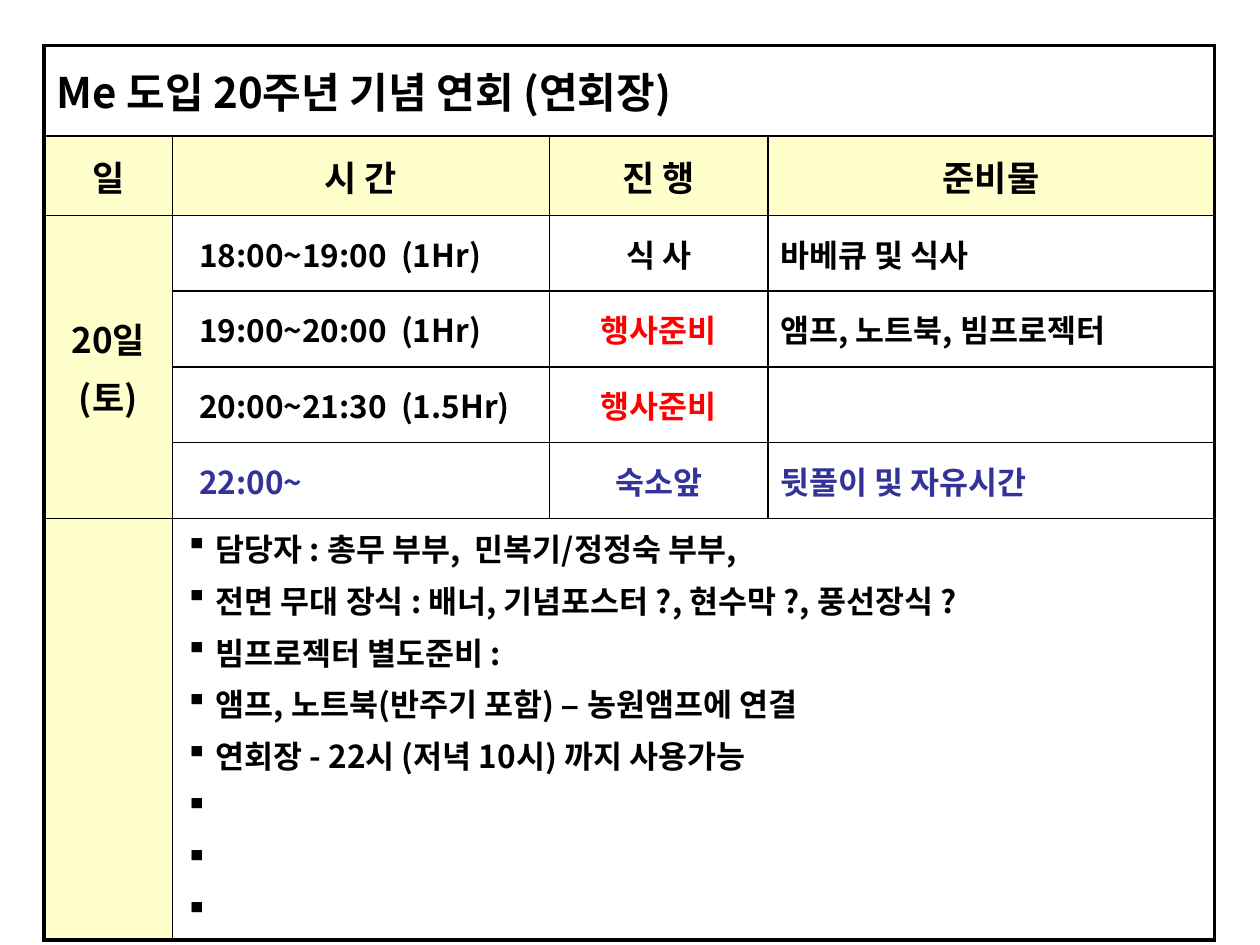
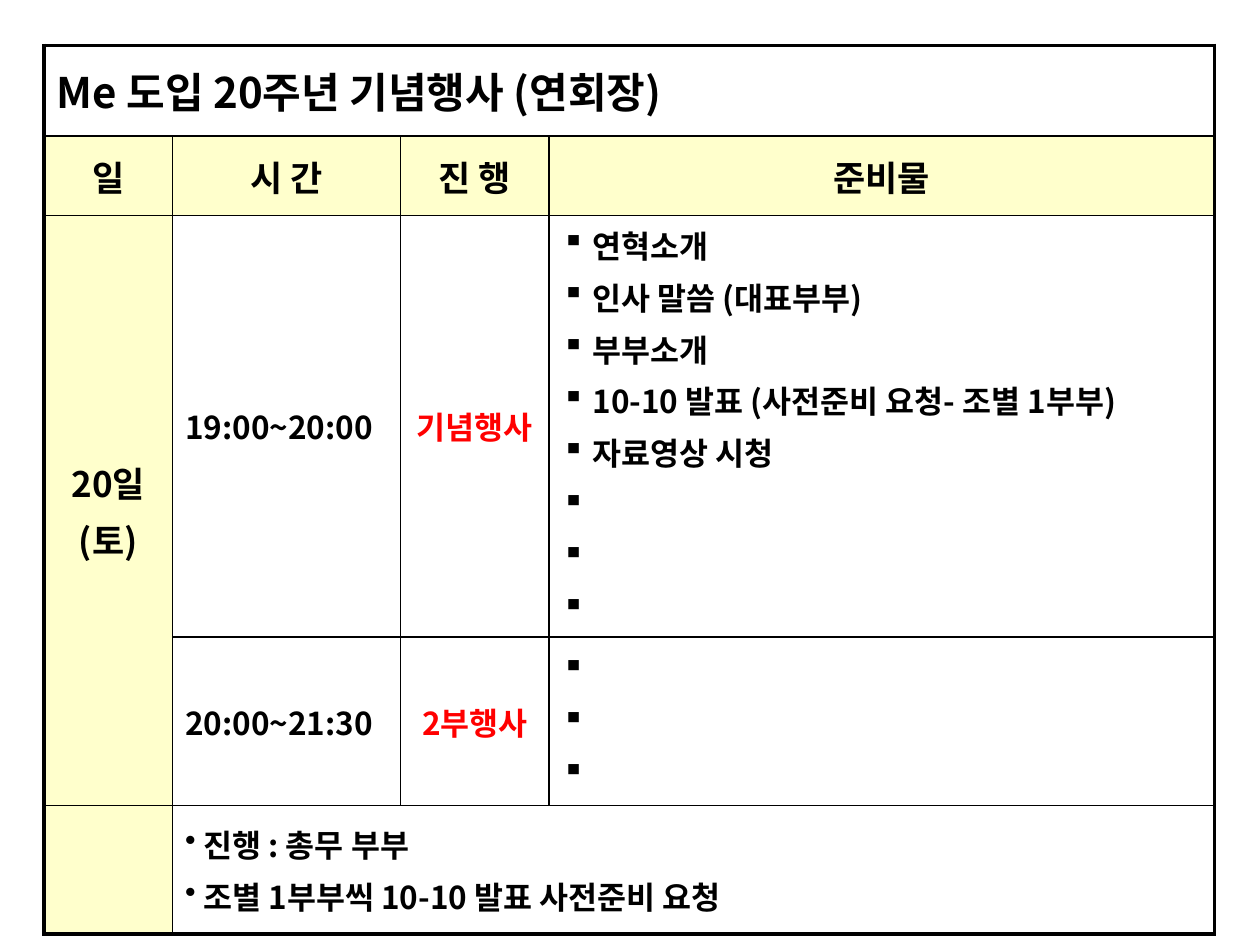
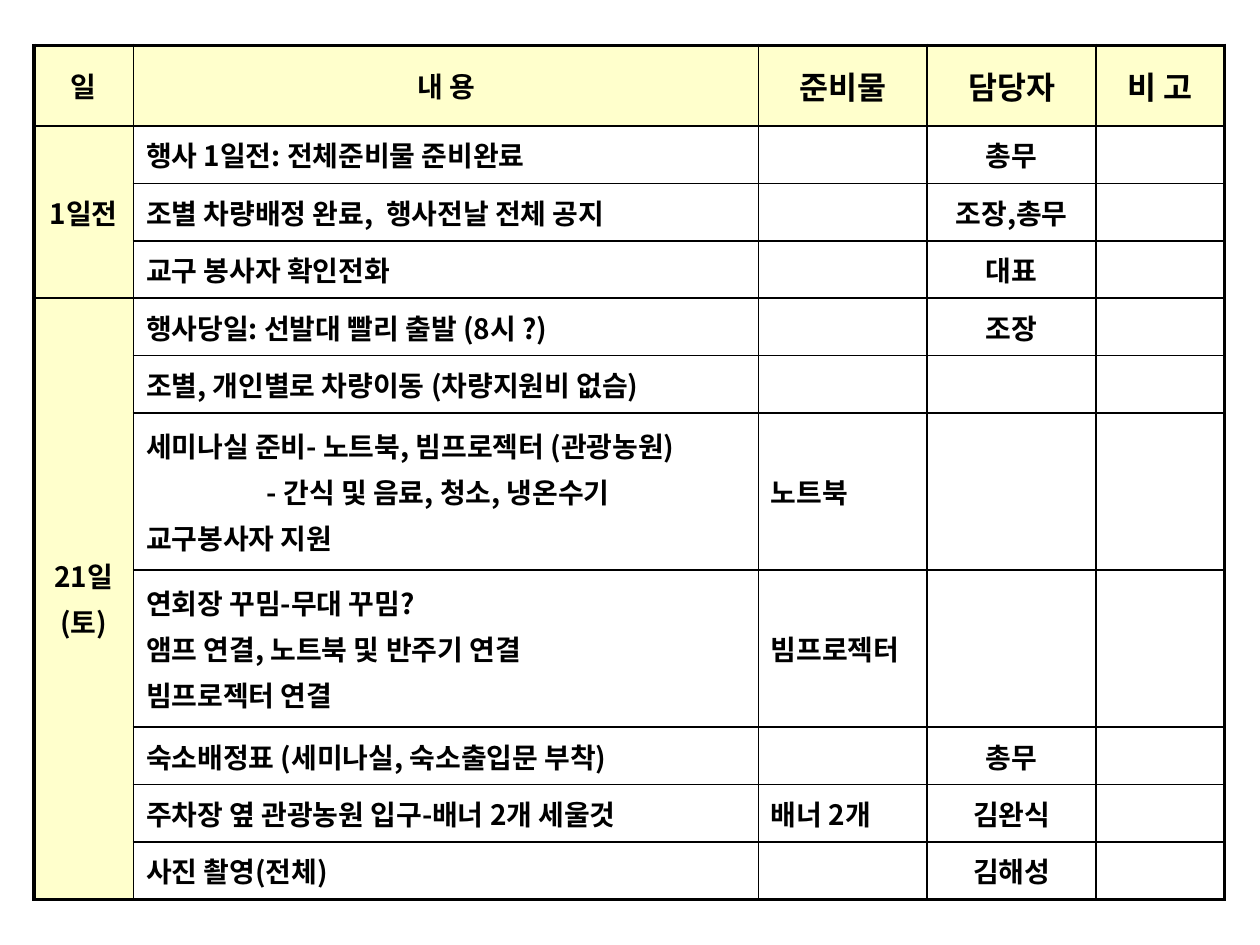
from pptx import Presentation
from pptx import util as u
from pptx.dml.color import RGBColor
from pptx.enum import text
from pptx.oxml import ns, xmlchemy

INK = RGBColor(0, 0, 0)
RED = RGBColor(0xFF, 0, 0)
BLUE = RGBColor(0x33, 0x33, 0x99)
CREAM = RGBColor(0xFF, 0xFF, 0xCC)
FACE = "Noto Sans CJK KR"
DASH = "– "
THICK, THIN = 2.25, 1

# Keys are (row, column); a merge gives its first and last cell.
PLANS = [
    {
        "left": 25.2,
        "cols": [73.4, 215.3, 125, 255],
        "rows": [51.8, 45.4] + [43.3] * 4 + [210],
        "head": 1,
        "mid": 2,
        "shift": 8,
        "size": 18,
        "sizes": {(0, 0): 24, (2, 0): 20, **{(1, c): 20 for c in range(4)}},
        "merge": [((0, 0), (0, 3)), ((2, 0), (5, 0)), ((6, 1), (6, 3))],
        "inks": {(3, 2): RED, (4, 2): RED, **{(5, c): BLUE for c in (1, 2, 3)}},
        "cells": [
            ["Me 도입 20주년 기념 연회 (연회장)"],
            ["일", "시 간", "진 행", "준비물"],
            ["20일\n(토)", "18:00~19:00  (1Hr)", "식 사", "바베큐 및 식사"],
            ["", "19:00~20:00  (1Hr)", "행사준비", "앰프, 노트북, 빔프로젝터"],
            ["", "20:00~21:30  (1.5Hr)", "행사준비"],
            ["", "22:00~", "숙소앞", "뒷풀이 및 자유시간"],
            ["", "▪ 담당자 : 총무 부부,  민복기/정정숙 부부,\n"
                 "▪ 전면 무대 장식 : 배너, 기념포스터 ?, 현수막 ?, 풍선장식 ?\n"
                 "▪ 빔프로젝터 별도준비 :\n"
                 "▪ 앰프, 노트북(반주기 포함) – 농원앰프에 연결\n"
                 "▪ 연회장 - 22시 (저녁 10시) 까지 사용가능\n"
                 "▪ \n▪ \n▪ "],
        ],
    },
    {
        "left": 25.2,
        "cols": [73.4, 130.3, 85, 380],
        "rows": [51.8, 45.4, 220.3, 96.5, 73.4],
        "head": 1,
        "mid": 2,
        "shift": 0,
        "size": 18,
        "sizes": {(0, 0): 24, (2, 0): 20, **{(1, c): 20 for c in range(4)}},
        "merge": [((0, 0), (0, 3)), ((2, 0), (3, 0)), ((4, 1), (4, 3))],
        "inks": {(2, 2): RED, (3, 2): RED},
        "cells": [
            ["Me 도입 20주년 기념행사 (연회장)"],
            ["일", "시 간", "진 행", "준비물"],
            ["20일\n(토)", "19:00~20:00", "기념행사",
             "▪ 연혁소개\n▪ 인사 말씀 (대표부부)\n▪ 부부소개\n"
             "▪ 10-10 발표 (사전준비 요청- 조별 1부부)\n▪ 자료영상 시청\n"
             "▪ \n▪ \n▪ "],
            ["", "20:00~21:30", "2부행사", "▪ \n▪ \n▪ "],
            ["", "• 진행 : 총무 부부\n• 조별 1부부씩 10-10 발표 사전준비 요청"],
        ],
    },
    {
        "left": 19.4,
        "cols": [56.9, 357.1, 96.5, 96.5, 73.4],
        "rows": [46.1] + [32.8] * 5 + [89.8] * 2 + [32.8] * 3,
        "head": 0,
        "mid": 3,
        "shift": 0,
        "size": 16,
        "sizes": {(0, c): 18 for c in (2, 3, 4)},
        "merge": [((1, 0), (3, 0)), ((4, 0), (10, 0))],
        "inks": {},
        "cells": [
            ["일", "내 용", "준비물", "담당자", "비 고"],
            ["1일전", "행사 1일전: 전체준비물 준비완료", "", "총무"],
            ["", "조별 차량배정 완료,  행사전날 전체 공지", "", "조장,총무"],
            ["", "교구 봉사자 확인전화", "", "대표"],
            ["21일\n(토)", "행사당일: 선발대 빨리 출발 (8시 ?)", "", "조장"],
            ["", "조별, 개인별로 차량이동 (차량지원비 없슴)"],
            ["", "세미나실 준비- 노트북, 빔프로젝터 (관광농원)\n"
                 "- 간식 및 음료, 청소, 냉온수기\n교구봉사자 지원", "노트북"],
            ["", "연회장 꾸밈-무대 꾸밈?\n앰프 연결, 노트북 및 반주기 연결\n"
                 "빔프로젝터 연결", "빔프로젝터"],
            ["", "숙소배정표 (세미나실, 숙소출입문 부착)", "", "총무"],
            ["", "주차장 옆 관광농원 입구-배너 2개 세울것", "배너 2개", "김완식"],
            ["", "사진 촬영(전체)", "", "김해성"],
        ],
    },
]


def add(parent, tag, **attrs):
    """Append a child element with the given attributes."""
    child = xmlchemy.OxmlElement(tag)
    for key, value in attrs.items():
        child.set(key, str(value))
    parent.append(child)
    return child


def write(cell, words, size, ink, align, shift):
    """Fill a cell line by line; a leading ▪ or • becomes a bullet."""
    for n, line in enumerate(words.split("\n")):
        para = cell.text_frame.paragraphs[0] if n == 0 else cell.text_frame.add_paragraph()
        para.alignment = align
        para.space_before = u.Pt(size * 0.2)
        props = para._p.get_or_add_pPr()
        indent = 69 if line.startswith("- ") else shift
        if indent:
            props.set("marL", str(u.Pt(indent)))
        if line[0] in "▪•":
            add(props, "a:buChar", char=line[0])
            line = line[1:]
        start, dash, rest = line.partition(DASH)
        for part, face in ((start, FACE), (dash, "Arial"), (rest, FACE)):
            if part:
                run = para.add_run()
                run.text = part
                style = {"name": face, "size": u.Pt(size), "bold": True}
                for key, value in style.items():
                    setattr(run.font, key, value)
                run.font.color.rgb = ink
                add(run._r.get_or_add_rPr(), "a:ea", typeface=face)
                # the East Asian face must follow the Latin one
                run._r.rPr.find(ns.qn("a:latin")).addnext(run._r.rPr.find(ns.qn("a:ea")))


deck = Presentation()
deck.slide_width, deck.slide_height = u.Pt(720), u.Pt(540)

for plan in PLANS:
    cols, rows, head = plan["cols"], plan["rows"], plan["head"]
    slide = deck.slides.add_slide(deck.slide_layouts[6])
    table = slide.shapes.add_table(
        len(rows), len(cols), u.Pt(plan["left"]), u.Pt(25.9),
        u.Pt(sum(cols)), u.Pt(sum(rows))).table
    table.first_row = table.horz_banding = False
    for col, width in zip(table.columns, cols):
        col.width = u.Pt(width)
    for row, height in zip(table.rows, rows):
        row.height = u.Pt(height)
    for first, last in plan["merge"]:
        table.cell(*first).merge(table.cell(*last))

    for r in range(len(rows)):
        for c in range(len(cols)):
            cell = table.cell(r, c)
            cell.vertical_anchor = text.MSO_ANCHOR.MIDDLE
            outer = {
                "L": c == 0,
                "R": c + cell.span_width == len(cols) or c == len(cols) - 1,
                "T": r == 0,
                "B": r + cell.span_height == len(rows) or r == len(rows) - 1,
            }
            for side, edge in outer.items():
                line = add(cell._tc.get_or_add_tcPr(), "a:ln" + side,
                           w=u.Pt(THICK if edge else THIN))
                add(add(line, "a:solidFill"), "a:srgbClr", val=INK)
            if r == head or (c == 0 and r > head):
                cell.fill.solid()
                cell.fill.fore_color.rgb = CREAM
            else:
                cell.fill.background()

            words = plan["cells"][r][c] if c < len(plan["cells"][r]) else ""
            if words:
                centre = r == head or (r > head and c in (0, plan["mid"]))
                align = text.PP_ALIGN.CENTER if centre else text.PP_ALIGN.LEFT
                timed = c == 1 and not centre and words[0] != "▪"
                write(cell, words, plan["sizes"].get((r, c), plan["size"]),
                      plan["inks"].get((r, c), INK), align,
                      plan["shift"] if timed else 0)

deck.save("out.pptx")
